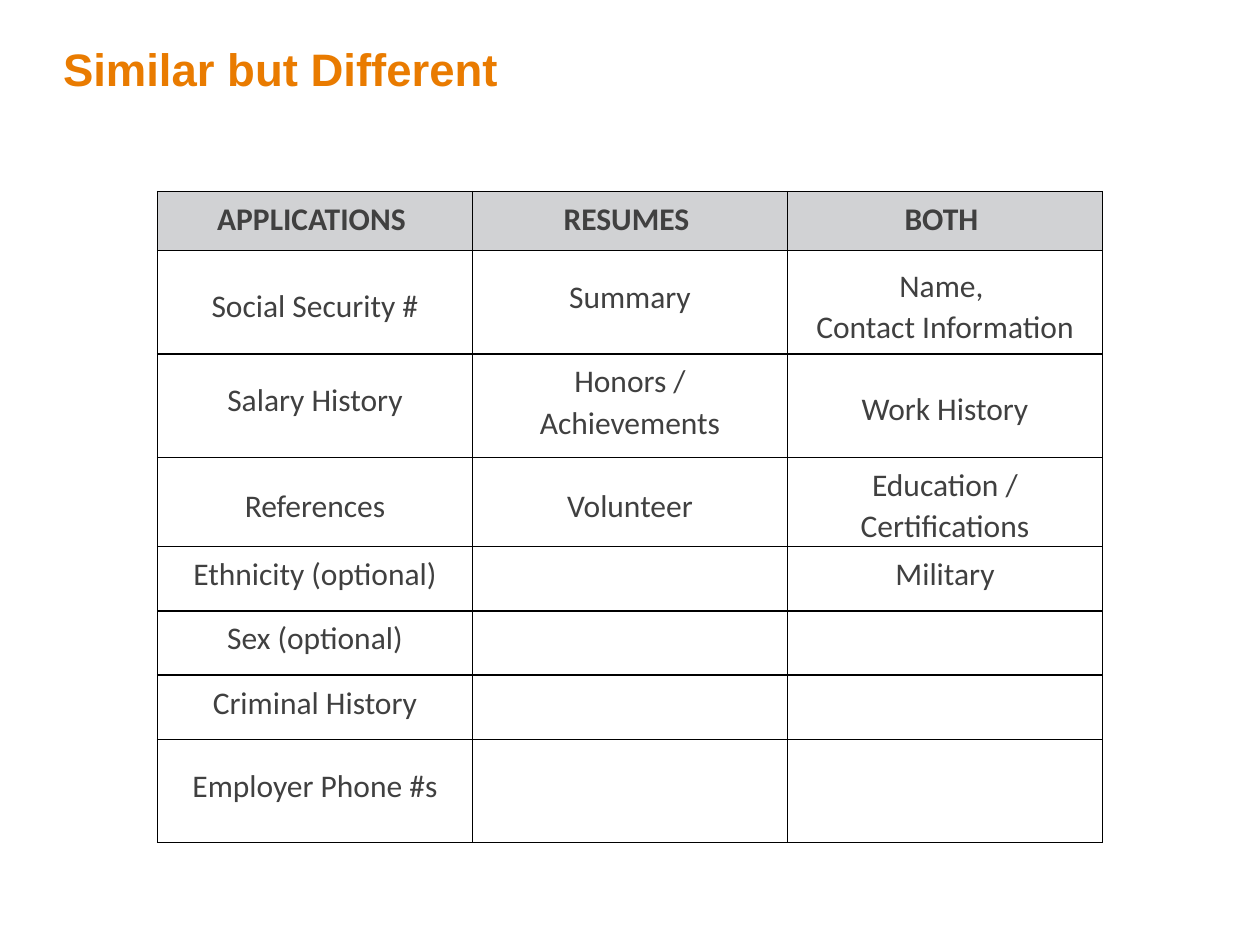
from pptx import Presentation
from pptx.dml.color import RGBColor
from pptx.enum.text import MSO_ANCHOR as Anchor, PP_ALIGN as Align
from pptx.oxml import parse_xml
from pptx.oxml.ns import nsdecls
from pptx.util import Inches, Pt


def color(code):
    return RGBColor.from_string(code)


def edge(cell):
    for side in "LRTB":
        cell._tc.get_or_add_tcPr().append(parse_xml(
            f'<a:ln{side} {nsdecls("a")} w="12700"><a:solidFill>'
            f'<a:srgbClr val="000000"/></a:solidFill></a:ln{side}>'))


prs = Presentation()
prs.slide_width, prs.slide_height = Inches(10), Inches(7.5)
slide = prs.slides.add_slide(prs.slide_layouts[5])

title = slide.shapes.title
title.left, title.top = Inches(0.5), Inches(0.04)
title.width, title.height = Inches(8.25), Inches(1)
frame = title.text_frame
frame.text = "Similar but Different"
frame.margin_left = frame.margin_right = 0
frame.margin_top = frame.margin_bottom = 0
frame.vertical_anchor = Anchor.MIDDLE
para = frame.paragraphs[0]
para.alignment = Align.LEFT
para.line_spacing = Pt(31)
font = para.runs[0].font
font.name, font.size, font.bold = "Arial", Pt(26), True
font.color.rgb = color("E97B00")

rows = [
    ("APPLICATIONS ", "RESUMES ", "BOTH "),
    ("Social Security #", "Summary", "Name, \nContact Information"),
    ("Salary History", "Honors /\nAchievements", "Work History"),
    ("References", "Volunteer", "Education / Certifications"),
    ("Ethnicity (optional)", "", "Military"),
    ("Sex (optional)", "", ""),
    ("Criminal History", "", ""),
    ("Employer Phone #s", "", ""),
]
highs = [0.47, 0.82, 0.82, 0.71, 0.51, 0.51, 0.51, 0.82]
middle = {(1, 0), (1, 2), (2, 2), (3, 0), (3, 1)}
lower = {(1, 1), (2, 0), (7, 0)}

table = slide.shapes.add_table(
    len(rows), 3, Inches(1.25), Inches(1.52), Inches(7.5), Inches(sum(highs))).table
table.horz_banding = False
for col in table.columns:
    col.width = Inches(2.5)

for r, row in enumerate(rows):
    table.rows[r].height = Inches(highs[r])
    for c, text in enumerate(row):
        cell = table.cell(r, c)
        edge(cell)
        if r == 0:
            cell.fill.solid()
            cell.fill.fore_color.rgb = color("D1D2D4")
        else:
            cell.fill.background()
        cell.margin_left = cell.margin_right = Inches(0.06)
        cell.margin_top = Inches(0.2 if (r, c) in lower else 0.05)
        cell.margin_bottom = 0
        cell.vertical_anchor = Anchor.MIDDLE if (r, c) in middle else Anchor.TOP
        cell.text_frame.text = text
        for para in cell.text_frame.paragraphs:
            para.alignment = Align.CENTER
            para.line_spacing = 1.07
            for run in para.runs:
                font = run.font
                font.name, font.size, font.bold = "Calibri", Pt(18), r == 0
                font.color.rgb = color("404040")

prs.save("out.pptx")
